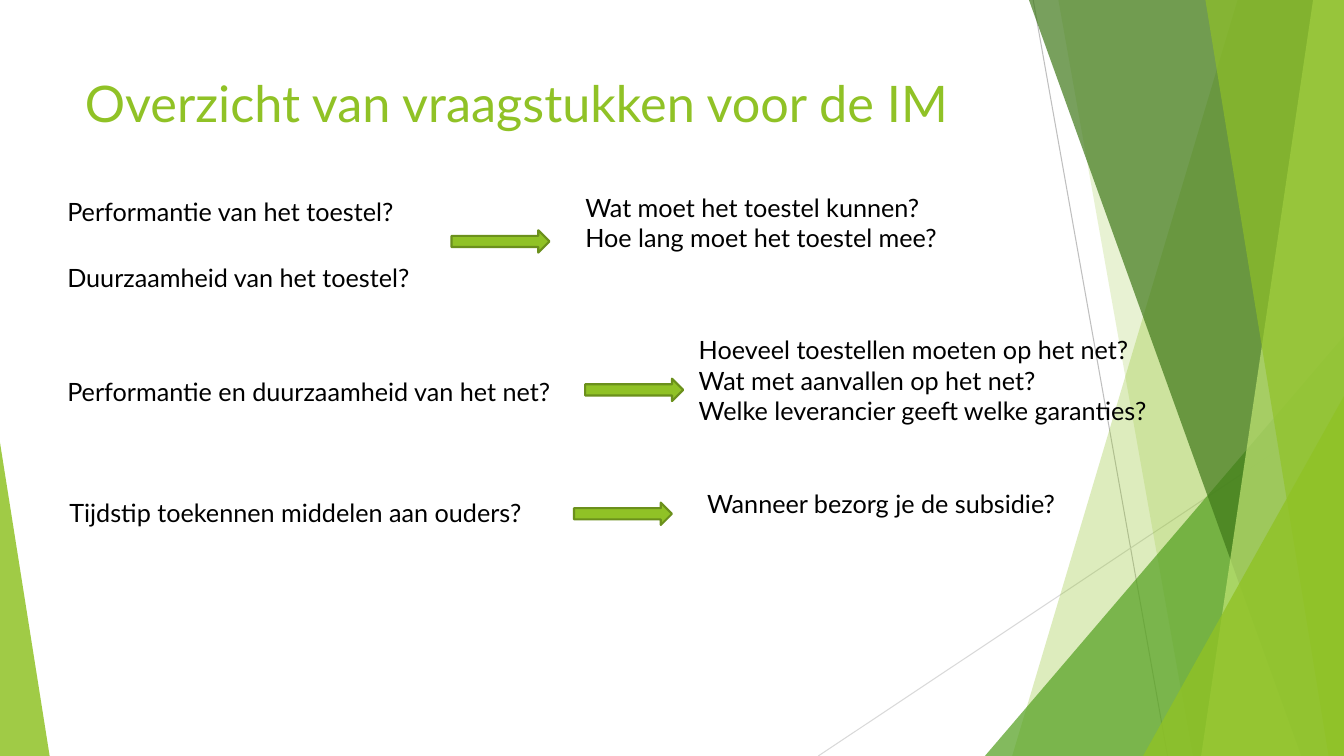
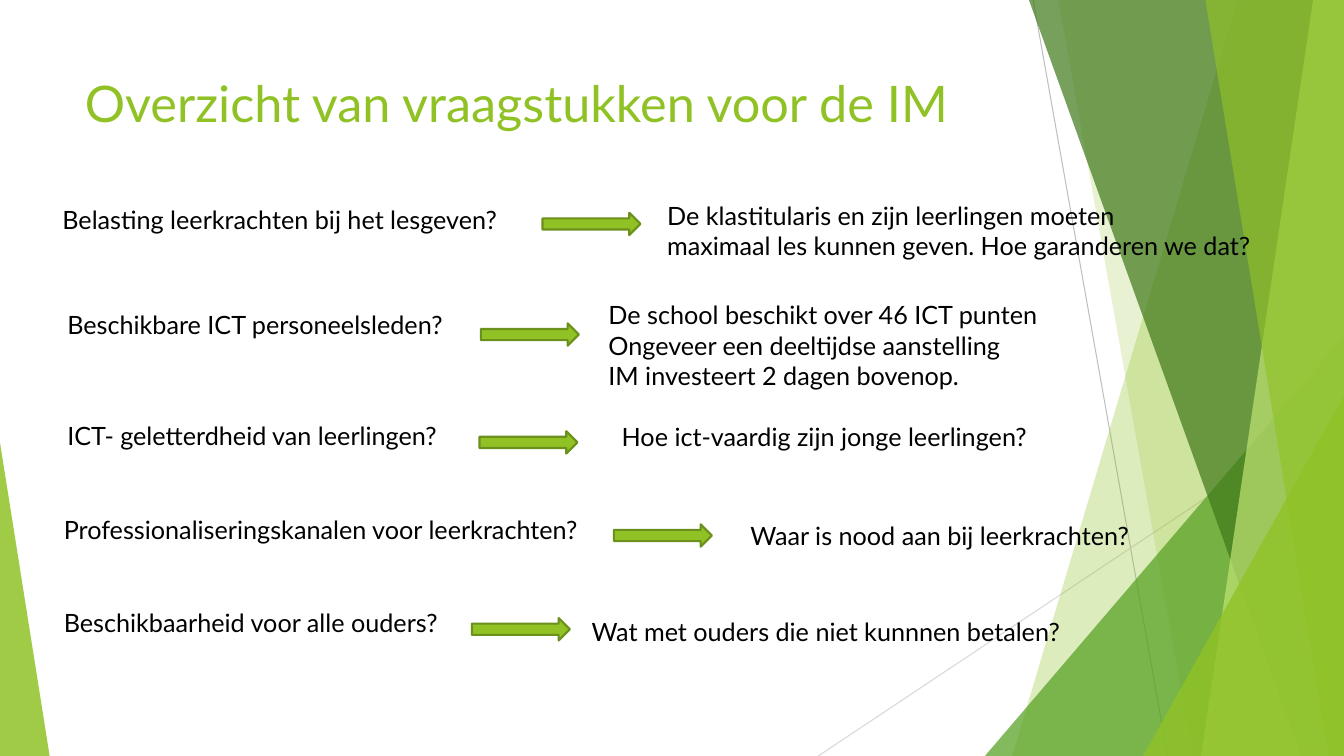
from lxml.etree import SubElement
from pptx import Presentation
from pptx.dml.color import RGBColor
from pptx.enum.shapes import MSO_CONNECTOR, MSO_SHAPE
from pptx.enum.text import MSO_ANCHOR, MSO_AUTO_SIZE, PP_ALIGN
from pptx.oxml.ns import qn
from pptx.util import Pt

WIDTH, HEIGHT = 960, 540
GREEN, BLACK = "90C226", "000000"
TITLE = "Overzicht van vraagstukken voor de IM"

SLIDES = [
    {
        "texts": [
            (41, 137, 256.5, ["Performantie van het toestel?"]),
            (42.5, 352, 349, ["Tijdstip toekennen middelen aan ouders?"]),
            (41, 183.5, 266.5, ["Duurzaamheid van het toestel?"]),
            (41, 265, 373, ["Performantie en duurzaamheid van het net?"]),
            (411, 134, 280, ["Wat moet het toestel kunnen?",
                             "Hoe lang moet het toestel mee?"]),
            (492, 235.5, 350, ["Hoeveel toestellen moeten op het net?",
                               "Wat met aanvallen op het net?",
                               "Welke leverancier geeft welke garanties?"]),
            (498, 345.5, 271, ["Wanneer bezorg je de subsidie?"]),
        ],
        "arrows": [(322.5, 164.5), (418, 270.5), (410, 359)],
    },
    {
        "texts": [
            (37.5, 142.5, 340.5, ["Belasting leerkrachten bij het lesgeven?"]),
            (41, 217.5, 288, ["Beschikbare ICT personeelsleden?"]),
            (41, 296.5, 296, ["ICT- geletterdheid van leerlingen?"]),
            (38.5, 363.5, 396, ["Professionaliseringskanalen voor leerkrachten?"]),
            (38.5, 430.5, 289.5, ["Beschikbaarheid voor alle ouders?"]),
            (469.5, 139.5, 448.5, ["De klastitularis en zijn leerlingen moeten",
                                   "maximaal les kunnen geven. Hoe garanderen we dat?"]),
            (427.5, 210.5, 325.5, ["De school beschikt over 46 ICT punten",
                                   "Ongeveer een deeltijdse aanstelling",
                                   "IM investeert 2 dagen bovenop."]),
            (437, 297.5, 319.5, ["Hoe ict-vaardig zijn jonge leerlingen?"]),
            (529, 368, 296.5, ["Waar is nood aan bij leerkrachten?"]),
            (415.5, 437, 360, ["Wat met ouders die niet kunnnen betalen?"]),
        ],
        "arrows": [(387.5, 152), (343.5, 231), (342.5, 308), (438.5, 374.5), (337, 441.5)],
    },
]


def color(value):
    return RGBColor.from_string(value)


def assign(target, values):
    for name, value in values.items():
        setattr(target, name, value)


class GreenDeck:
    """Holds the shared style and the current page, and draws each kind of element."""

    font = "Lato"
    title_place = {"left": Pt(53.5), "top": Pt(48), "width": Pt(677), "height": Pt(104)}
    title_frame = {"word_wrap": True, "vertical_anchor": MSO_ANCHOR.TOP,
                   "auto_size": MSO_AUTO_SIZE.NONE}
    text_frame = {"word_wrap": False, "auto_size": MSO_AUTO_SIZE.SHAPE_TO_FIT_TEXT}
    line_height, padding = 21.8, 7.2
    arrow_size = (70, 16)

    def __init__(self):
        self.deck = Presentation()
        assign(self.deck, {"slide_width": Pt(WIDTH), "slide_height": Pt(HEIGHT)})
        self.layout = self.deck.slide_layouts[5]
        self.page = None

    def add_page(self, title):
        self.page = self.deck.slides.add_slide(self.layout)
        box = self.page.shapes.title
        assign(box, self.title_place)
        assign(box.text_frame, self.title_frame)
        self.fill_frame(box.text_frame, [title], 36, GREEN)

    def fill_frame(self, frame, lines, size, hue):
        for index, line in enumerate(lines):
            para = frame.add_paragraph() if index else frame.paragraphs[0]
            para.alignment = PP_ALIGN.LEFT
            span = para.add_run()
            span.text = line
            assign(span.font, {"name": self.font, "size": Pt(size)})
            span.font.color.rgb = color(hue)

    def text(self, left, top, width, lines):
        height = self.padding + self.line_height * len(lines)
        box = self.page.shapes.add_textbox(Pt(left), Pt(top), Pt(width), Pt(height))
        assign(box.text_frame, self.text_frame)
        self.fill_frame(box.text_frame, lines, 18, BLACK)

    def paint(self, shape, hue, opacity=100):
        shape.shadow.inherit = False
        shape.fill.solid()
        shape.fill.fore_color.rgb = color(hue)
        shape.line.fill.background()
        if opacity < 100:
            tone = shape._element.spPr.find(qn("a:solidFill")).find(qn("a:srgbClr"))
            SubElement(tone, qn("a:alpha")).set("val", str(opacity * 1000))

    def arrow(self, left, top):
        width, height = self.arrow_size
        shape = self.page.shapes.add_shape(
            MSO_SHAPE.RIGHT_ARROW, Pt(left), Pt(top), Pt(width), Pt(height))
        self.paint(shape, GREEN)
        shape.line.color.rgb = color("6B901C")
        shape.line.width = Pt(1.5)

    def line(self, shapes, start, end, hue):
        points = [Pt(value) for value in (*start, *end)]
        connector = shapes.add_connector(MSO_CONNECTOR.STRAIGHT, *points)
        connector.line.color.rgb = color(hue)
        connector.line.width = Pt(0.75)
        SubElement(connector._element.spPr, qn("a:effectLst"))

    def band(self, shapes, top_left, bottom_left, hue, opacity):
        outline = shapes.build_freeform(Pt(top_left), 0)
        corners = [(WIDTH, 0), (WIDTH, HEIGHT), (bottom_left, HEIGHT)]
        outline.add_line_segments([(Pt(x), Pt(y)) for x, y in corners], close=True)
        self.paint(outline.convert_to_shape(), hue, opacity)

    def wedge(self, shapes, left, top, width, apex, hue, opacity):
        shape = shapes.add_shape(MSO_SHAPE.ISOSCELES_TRIANGLE, Pt(left), Pt(top),
                                 Pt(width), Pt(HEIGHT - top))
        shape.adjustments[0] = apex
        self.paint(shape, hue, opacity)

    def decorate_layout(self):
        group = self.page.shapes.add_group_shape()
        shapes = group.shapes
        self.line(shapes, (738, 0), (834, HEIGHT), "BFBFBF")
        self.line(shapes, (WIDTH, 290), (584.5, HEIGHT), "D9D9D9")
        self.band(shapes, 884, 723, GREEN, 30)
        self.band(shapes, 756, 852, GREEN, 20)
        self.wedge(shapes, 703.5, 240, 256.5, 1, "54A021", 72)
        self.band(shapes, 735, 929.5, "3F7819", 70)
        self.band(shapes, 938, 858, "C0E474", 70)
        self.band(shapes, 861, 949, GREEN, 65)
        self.wedge(shapes, 816.5, 283, 143.5, 1, GREEN, 80)
        self.wedge(shapes, 0, 316, 35.5, 0, GREEN, 85)
        self.layout.shapes._spTree.insert(2, group._element)


def main():
    style = GreenDeck()
    for number, content in enumerate(SLIDES):
        style.add_page(TITLE)
        if number == 0:
            style.decorate_layout()
        for entry in content["texts"]:
            style.text(*entry)
        for place in content["arrows"]:
            style.arrow(*place)
    style.deck.save("out.pptx")


if __name__ == "__main__":
    main()
